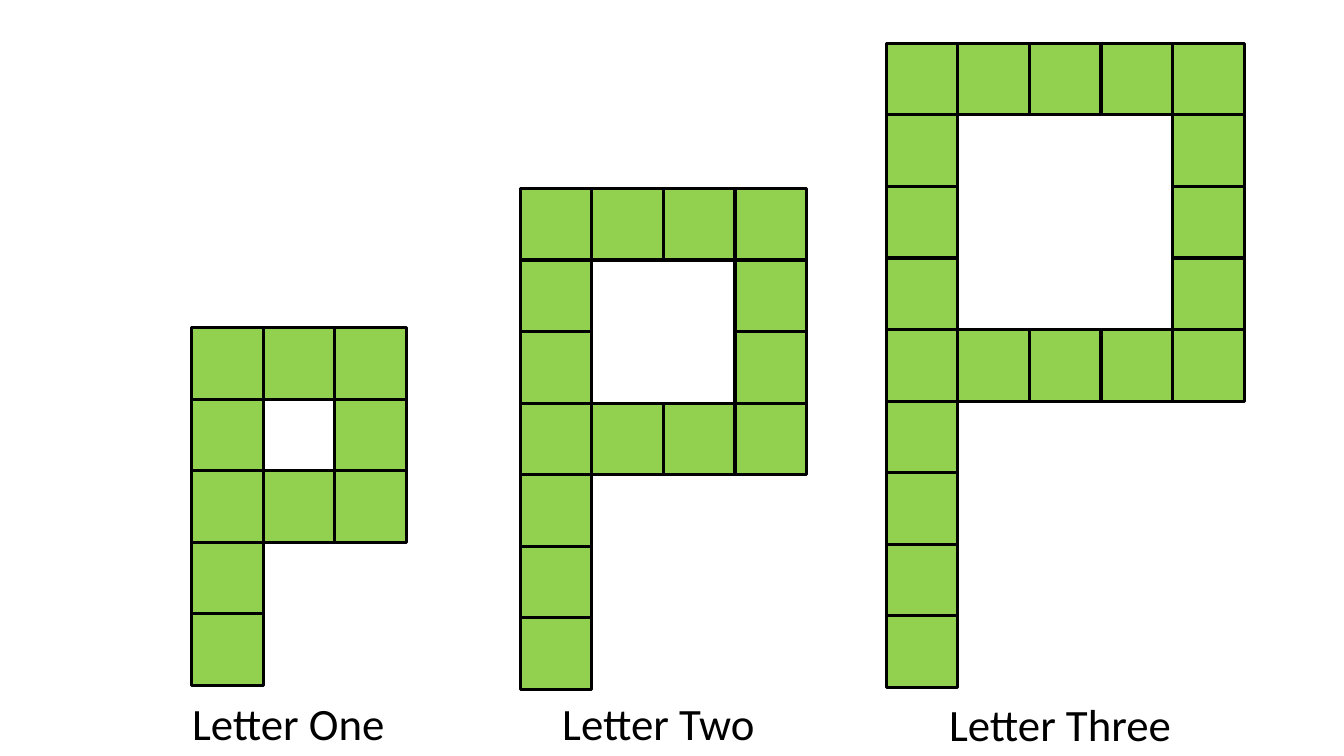
from dataclasses import dataclass

from pptx import Presentation
from pptx.dml.color import RGBColor
from pptx.enum.shapes import MSO_SHAPE
from pptx.enum.text import MSO_AUTO_SIZE, PP_ALIGN
from pptx.slide import Slide
from pptx.util import Inches, Pt

RECT = MSO_SHAPE.RECTANGLE
CENTER = PP_ALIGN.CENTER
GROW = MSO_AUTO_SIZE.SHAPE_TO_FIT_TEXT

COLORS = {"tile": "92D050", "ink": "000000"}
FONT = "Calibri"
CELL = 0.71


@dataclass(frozen=True)
class Label:
    text: str
    left: float
    top: float
    width: float
    height: float = 0.64


@dataclass(frozen=True)
class Letter:
    left: float
    top: float
    side: int
    label: Label

    def cells(self) -> list[tuple[int, int]]:
        last = self.side - 1
        rows = 2 * self.side - 1
        return [
            (col, row)
            for row in range(rows)
            for col in range(self.side)
            if col == 0 or row in (0, last) or (col == last and row < last)
        ]


LETTERS = [
    Letter(1.9, 3.25, 3, Label("Letter One", 1.59, 6.85, 2.54)),
    Letter(5.16, 1.87, 4, Label("Letter Two", 5.26, 6.85, 2.54)),
    Letter(8.79, 0.43, 5, Label("Letter Three", 9.05, 6.86, 2.93)),
]


def color(name: str) -> RGBColor:
    return RGBColor.from_string(COLORS[name])


def draw_tile(slide: Slide, left: float, top: float) -> None:
    tile = slide.shapes.add_shape(
        RECT, Inches(left), Inches(top), Inches(CELL), Inches(CELL)
    )
    tile.shadow.inherit = False
    tile.fill.solid()
    tile.fill.fore_color.rgb = color("tile")
    tile.line.color.rgb = color("ink")
    tile.line.width = Pt(2.25)


def draw_label(slide: Slide, label: Label) -> None:
    box = slide.shapes.add_textbox(
        Inches(label.left), Inches(label.top),
        Inches(label.width), Inches(label.height),
    )
    frame = box.text_frame
    frame.word_wrap = True
    frame.auto_size = GROW
    line = frame.paragraphs[0]
    line.text = label.text
    line.alignment = CENTER
    line.font.name = FONT
    line.font.size = Pt(32)
    line.font.color.rgb = color("ink")


def draw_letter(slide: Slide, letter: Letter) -> None:
    draw_label(slide, letter.label)
    for col, row in letter.cells():
        draw_tile(slide, letter.left + col * CELL, letter.top + row * CELL)


def main() -> None:
    deck = Presentation()
    deck.slide_width = Inches(13.33)
    deck.slide_height = Inches(7.5)
    slide = deck.slides.add_slide(deck.slide_layouts[6])
    for letter in LETTERS:
        draw_letter(slide, letter)
    deck.save("out.pptx")


if __name__ == "__main__":
    main()
